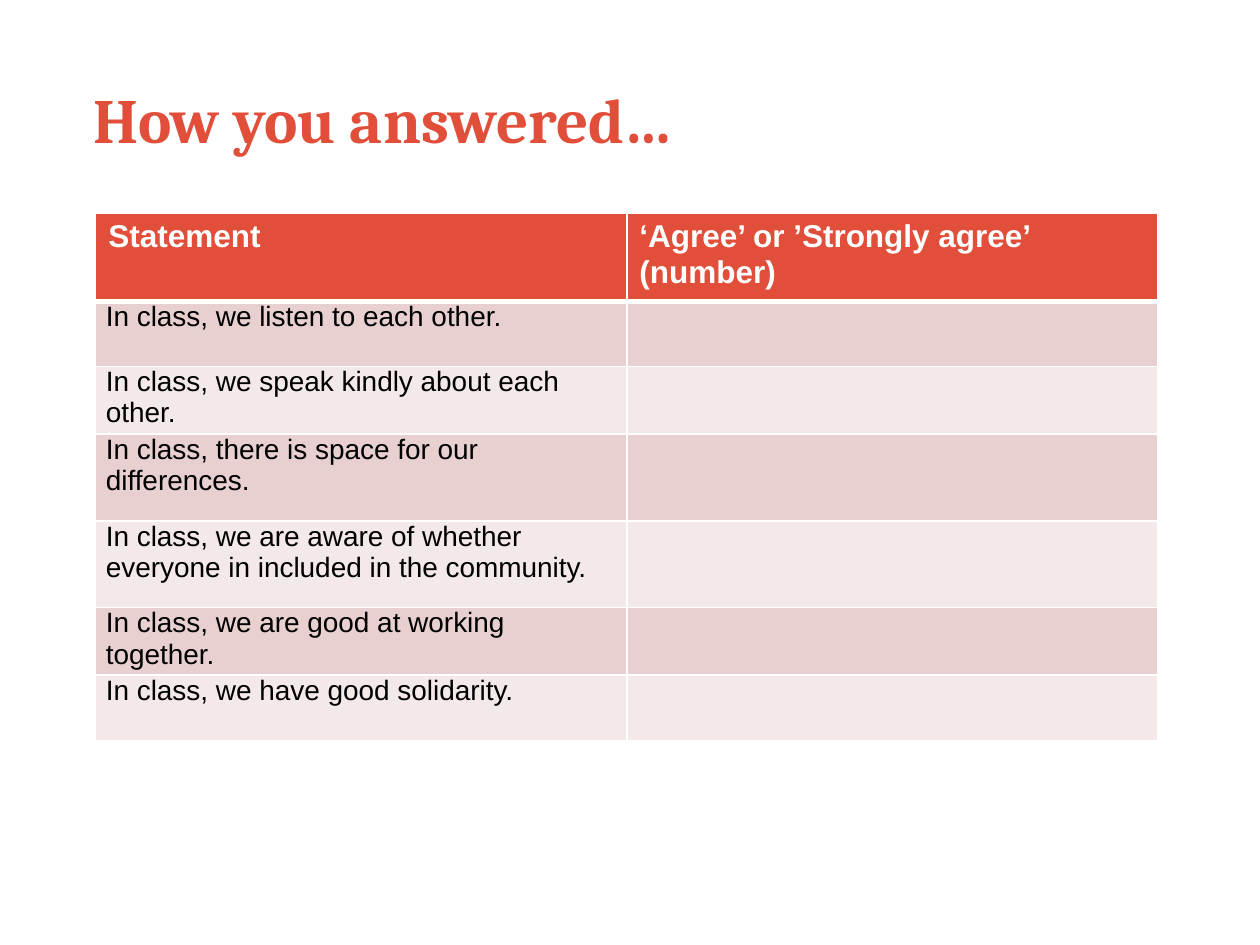
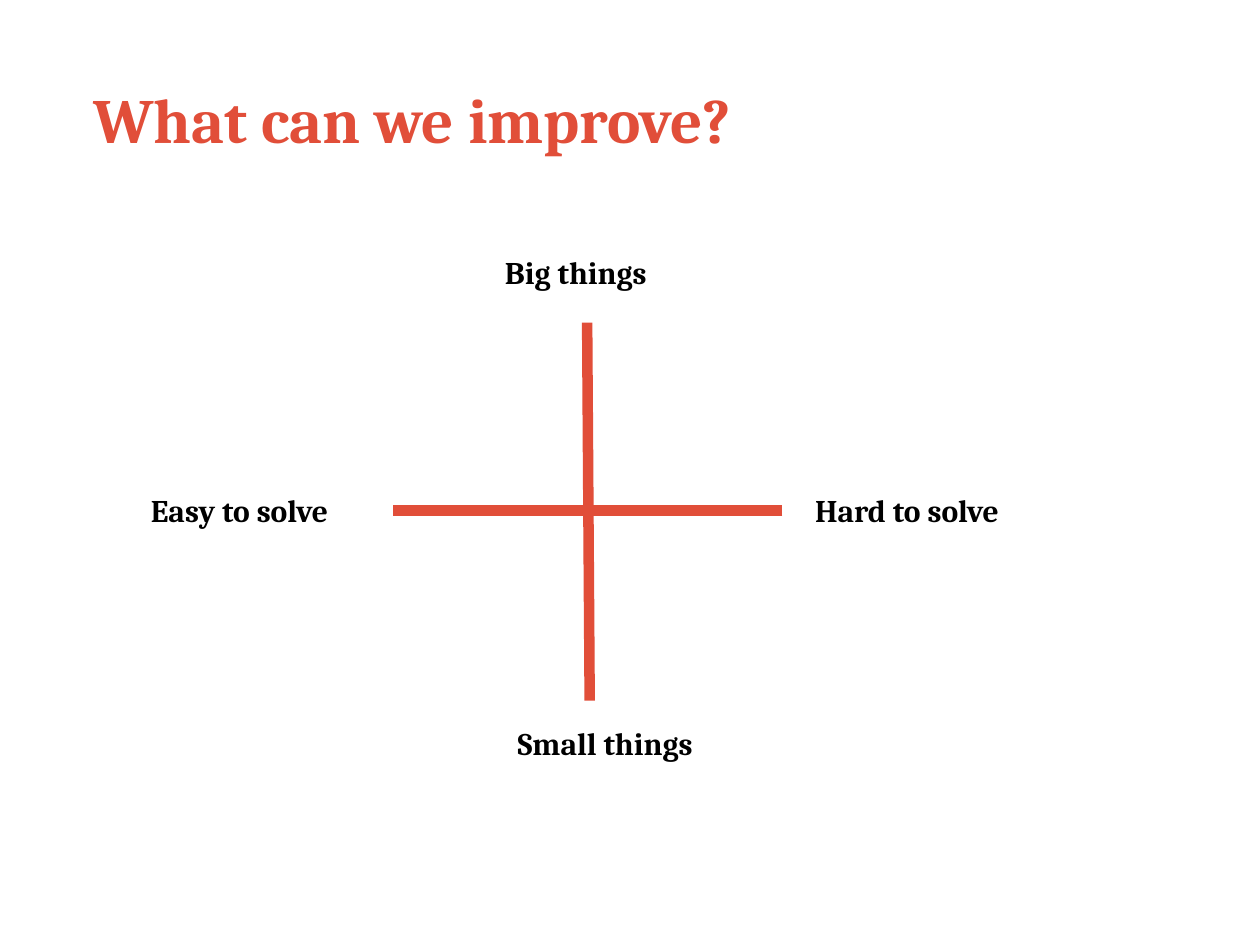
from dataclasses import dataclass
from typing import NamedTuple

from lxml.etree import SubElement
from pptx import Presentation
from pptx.dml.color import RGBColor as Rgb
from pptx.enum.shapes import MSO_CONNECTOR as Connector
from pptx.enum.text import MSO_ANCHOR as Anchor
from pptx.oxml.ns import qn
from pptx.util import Emu, Inches, Pt


@dataclass(frozen=True)
class Theme:
    accent: str = "E14E39"
    text: str = "000000"
    paper: str = "FFFFFF"
    bands: tuple[str, str] = ("E8D0D0", "F4E9E9")
    heading_font: str = "Cambria"
    body_font: str = "Arial"
    title_size: float = 36
    label_size: float = 18
    statement_size: float = 16
    axis_width: float = 6
    rule: float = 1
    header_rule: float = 3


class Box(NamedTuple):
    column: float
    row: float
    columns: float
    rows: float


class Margins(NamedTuple):
    left: float
    top: float
    right: float
    bottom: float


class AxisLabel(NamedTuple):
    text: str
    box: Box


class Axis(NamedTuple):
    start: tuple[float, float]
    end: tuple[float, float]


THEME = Theme()
SLIDE_WIDTH, SLIDE_HEIGHT = Inches(10), Inches(7.5)
GRID_COLUMNS, GRID_ROWS = 100, 75

TITLE_BOX = Box(6.4, 6.2, 90, 6.4)
TITLE_MARGINS = Margins(0.1, 0, 0, 0)
HEADER_MARGINS = Margins(0.1, 0.05, 0.1, 0.05)
STATEMENT_MARGINS = Margins(0.08, 0, 0.08, 0)
LABEL_MARGINS = Margins(0.1, 0.05, 0.1, 0.05)

SURVEY_BOX = Box(7.6, 16.9, 84.3, 39.9)
ROW_SPANS = (5.2, 5.2, 5.2, 6.9, 6.9, 5.2, 5.2)
SURVEY_HEADERS = ("Statement", "‘Agree’ or ’Strongly agree’ (number)")
STATEMENTS = (
    "In class, we listen to each other.",
    "In class, we speak kindly about each other.",
    "In class, there is space for our differences.",
    "In class, we are aware of whether everyone in included in the community.",
    "In class, we are good at working together.",
    "In class, we have good solidarity.",
)

AXES = (
    Axis((46.6, 25.6), (46.8, 55.6)),
    Axis((62.1, 40.5), (31.2, 40.5)),
)
AXIS_LABELS = (
    AxisLabel("Big things", Box(39.1, 19.6, 15.3, 4)),
    AxisLabel("Small things", Box(40.1, 57, 21, 4)),
    AxisLabel("Easy to solve", Box(11, 38.5, 22, 4)),
    AxisLabel("Hard to solve", Box(63.7, 38.5, 24.9, 4)),
)


def across(columns: float) -> Emu:
    return Emu(round(SLIDE_WIDTH * columns / GRID_COLUMNS))


def down(rows: float) -> Emu:
    return Emu(round(SLIDE_HEIGHT * rows / GRID_ROWS))


def place(box: Box) -> tuple[Emu, Emu, Emu, Emu]:
    return across(box.column), down(box.row), across(box.columns), down(box.rows)


def set_margins(holder, margins: Margins) -> None:
    holder.margin_left = Inches(margins.left)
    holder.margin_top = Inches(margins.top)
    holder.margin_right = Inches(margins.right)
    holder.margin_bottom = Inches(margins.bottom)


def write(frame, text: str, size: float, font: str, color: str, bold: bool) -> None:
    frame.text = text
    style = frame.paragraphs[0].font
    for target in (style, *(run.font for run in frame.paragraphs[0].runs)):
        target.size, target.name, target.bold = Pt(size), font, bold
        target.color.rgb = Rgb.from_string(color)


def add_heading_text(slide, text: str, box: Box, margins: Margins, size: float,
                     color: str, anchor: Anchor) -> None:
    frame = slide.shapes.add_textbox(*place(box)).text_frame
    frame.word_wrap = True
    frame.vertical_anchor = anchor
    set_margins(frame, margins)
    write(frame, text, size, THEME.heading_font, color, True)


def add_titled_slide(deck, title: str):
    slide = deck.slides.add_slide(deck.slide_layouts[6])
    slide.background.fill.solid()
    slide.background.fill.fore_color.rgb = Rgb.from_string(THEME.paper)
    add_heading_text(slide, title, TITLE_BOX, TITLE_MARGINS,
                     THEME.title_size, THEME.accent, Anchor.MIDDLE)
    return slide


def set_borders(cell, top: float, bottom: float) -> None:
    properties = cell._tc.get_or_add_tcPr()
    widths = {"lnL": THEME.rule, "lnR": THEME.rule, "lnT": top, "lnB": bottom}
    for side, width in widths.items():
        border = SubElement(properties, qn(f"a:{side}"), w=str(Pt(width)))
        fill = SubElement(border, qn("a:solidFill"))
        SubElement(fill, qn("a:srgbClr"), val=THEME.paper)


def fill_cell(cell, text: str, row: int) -> None:
    is_header = row == 0
    set_borders(
        cell,
        top=THEME.header_rule if row == 1 else THEME.rule,
        bottom=THEME.header_rule if is_header else THEME.rule,
    )
    cell.fill.solid()
    band = THEME.accent if is_header else THEME.bands[(row - 1) % 2]
    cell.fill.fore_color.rgb = Rgb.from_string(band)
    set_margins(cell, HEADER_MARGINS if is_header else STATEMENT_MARGINS)
    write(
        cell.text_frame,
        text,
        THEME.label_size if is_header else THEME.statement_size,
        THEME.body_font,
        THEME.paper if is_header else THEME.text,
        is_header,
    )


def add_survey(slide) -> None:
    contents = [SURVEY_HEADERS, *((statement, "") for statement in STATEMENTS)]
    survey = slide.shapes.add_table(
        len(contents), len(SURVEY_HEADERS), *place(SURVEY_BOX)).table
    survey.horz_banding = False
    for column in survey.columns:
        column.width = across(SURVEY_BOX.columns / len(SURVEY_HEADERS))
    for row, (texts, span) in enumerate(zip(contents, ROW_SPANS)):
        survey.rows[row].height = down(span)
        for column, text in enumerate(texts):
            fill_cell(survey.cell(row, column), text, row)


def add_axis(slide, axis: Axis) -> None:
    (start_column, start_row), (end_column, end_row) = axis
    line = slide.shapes.add_connector(
        Connector.STRAIGHT, across(start_column), down(start_row),
        across(end_column), down(end_row))
    line.line.color.rgb = Rgb.from_string(THEME.accent)
    line.line.width = Pt(THEME.axis_width)
    SubElement(line._element.spPr, qn("a:effectLst"))


def main() -> None:
    deck = Presentation()
    deck.slide_width, deck.slide_height = SLIDE_WIDTH, SLIDE_HEIGHT

    add_survey(add_titled_slide(deck, "How you answered…"))

    improvement = add_titled_slide(deck, "What can we improve?")
    for axis in AXES:
        add_axis(improvement, axis)
    for label in AXIS_LABELS:
        add_heading_text(improvement, label.text, label.box, LABEL_MARGINS,
                         THEME.label_size, THEME.text, Anchor.TOP)

    deck.save("out.pptx")


if __name__ == "__main__":
    main()
